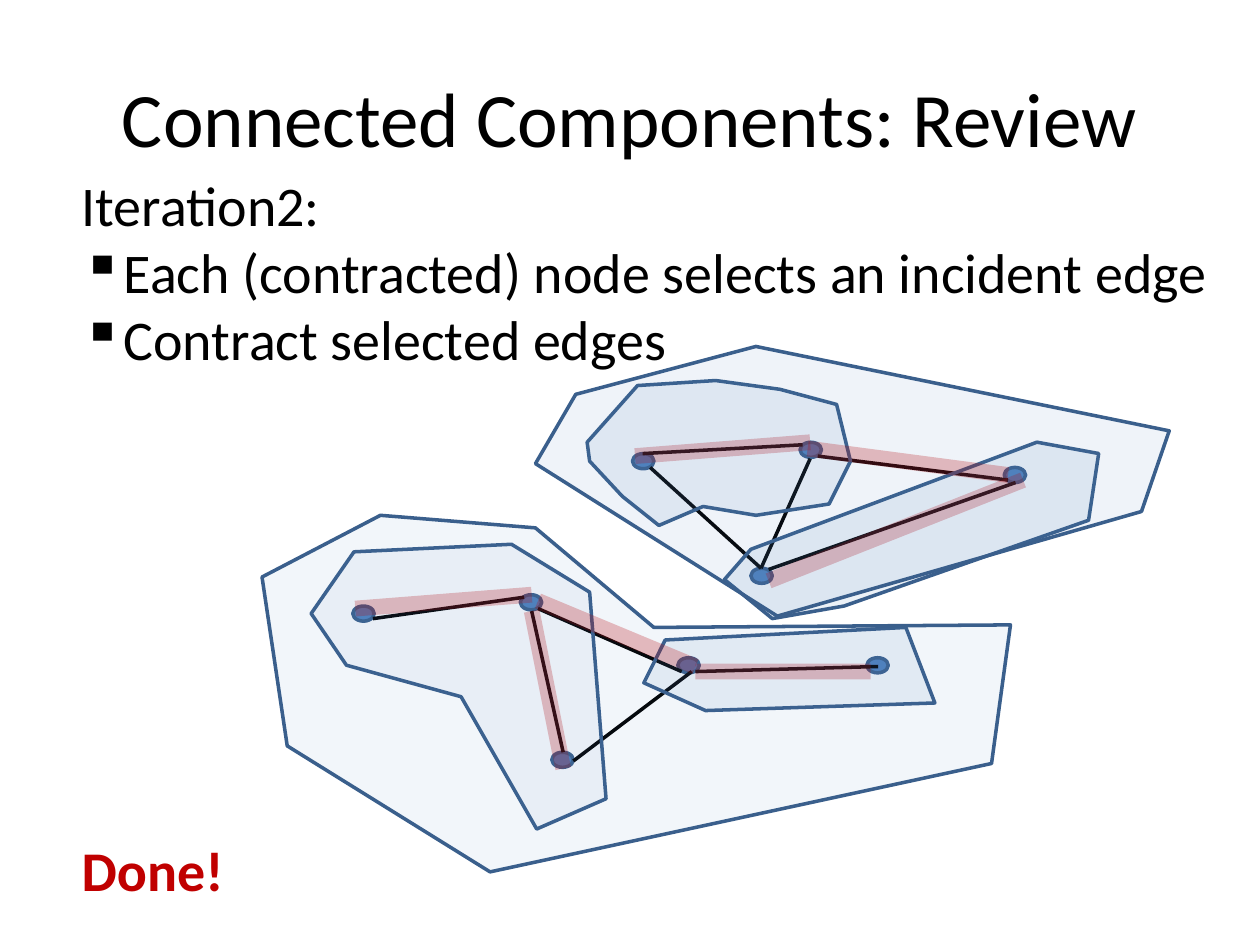
import pptx
import pptx.util
import pptx.dml.color
import pptx.enum.shapes
import pptx.enum.text
import pptx.oxml
import pptx.oxml.ns
import lxml.etree

Inches = pptx.util.Inches
Pt = pptx.util.Pt
RGBColor = pptx.dml.color.RGBColor
qn = pptx.oxml.ns.qn
BLUE = RGBColor(0x4F, 0x81, 0xBD)
NAVY = RGBColor(0x3A, 0x5F, 0x8C)
RED = RGBColor(0xC0, 0x00, 0x00)
BLACK = RGBColor(0x00, 0x00, 0x00)

deck = pptx.Presentation()
deck.slide_width = Inches(10)
deck.slide_height = Inches(7.5)
slide = deck.slides.add_slide(deck.slide_layouts[6])
shapes = slide.shapes


def fade(fill, alpha):
    tint = lxml.etree.SubElement(fill.find(qn("a:srgbClr")), qn("a:alpha"))
    tint.set("val", str(alpha * 1000))


def join(ends, color, width):
    line = shapes.add_connector(
        pptx.enum.shapes.MSO_CONNECTOR.STRAIGHT, *[Inches(n) for n in ends])
    line.line.color.rgb = color
    line.line.width = Pt(width)
    lxml.etree.SubElement(line._element.spPr, qn("a:effectLst"))
    return line


nodes = [
    (4.13, 4.72), (2.8, 4.81), (6.88, 5.22), (5.38, 5.22), (4.38, 5.97),
    (6.35, 3.51), (5.02, 3.6), (7.97, 3.71), (5.96, 4.51),
]
for x, y in nodes:
    node = shapes.add_shape(pptx.enum.shapes.MSO_SHAPE.OVAL, Inches(x), Inches(y),
                            Inches(0.17), Inches(0.12))
    node.shadow.inherit = False
    node.fill.solid()
    node.fill.fore_color.rgb = BLUE
    node.line.color.rgb = NAVY
    node.line.width = Pt(2)

edges = [
    (4.27, 4.83, 5.41, 5.33), (4.22, 4.85, 4.47, 5.97), (2.96, 4.91, 4.16, 4.74),
    (5.49, 5.33, 4.55, 6.04), (6.97, 5.29, 5.52, 5.33), (6.49, 3.62, 8, 3.81),
    (6.43, 3.64, 6.04, 4.51), (5.1, 3.6, 6.37, 3.53), (8.06, 3.83, 6.1, 4.52),
    (5.16, 3.71, 6.04, 4.51),
]
for ends in edges:
    join(ends, BLACK, 2)

first = [
    (5.52, 5.33, 6.91, 5.33), (5.04, 3.62, 6.43, 3.51), (2.82, 4.83, 4.22, 4.72),
    (4.47, 6.1, 4.22, 4.85), (6.1, 4.61, 8.12, 3.81),
]
second = [(6.41, 3.56, 8, 3.77), (4.27, 4.77, 5.52, 5.29)]
small = [
    (10, [(4.66, 3.51), (5.06, 3.06), (5.68, 3.02), (6.19, 3.09), (6.64, 3.21),
          (6.75, 3.66), (6.58, 4), (6, 4.09), (5.58, 4.02), (5.23, 4.17),
          (4.94, 3.94), (4.68, 3.66)]),
    (11, [(5.75, 4.6), (5.96, 4.36), (8.23, 3.51), (8.72, 3.6), (8.64, 4.13),
          (6.7, 4.81), (6.13, 4.91)]),
    (6, [(2.47, 4.87), (2.81, 4.38), (4.06, 4.32), (4.68, 4.7), (4.81, 6.34),
         (4.26, 6.58), (3.66, 5.53), (2.75, 5.28)]),
    (10, [(5.28, 5.08), (5.11, 5.42), (5.6, 5.64), (7.42, 5.58), (7.19, 4.98)]),
]
large = [
    (7, [(2.08, 4.58), (3.02, 4.09), (4.25, 4.19), (5.19, 4.98), (8.02, 4.96),
         (7.87, 6.06), (3.89, 6.92), (2.28, 5.92)]),
    (9, [(6.17, 4.89), (4.25, 3.68), (4.57, 3.13), (6, 2.75), (9.28, 3.42),
         (9.06, 4.06)]),
]
for marks, groups in [(first, small), (second, large)]:
    for ends in marks:
        mark = join(ends, RED, 9)
        fade(mark._element.spPr.find(qn("a:ln")).find(qn("a:solidFill")), 25)
    for alpha, points in groups:
        spots = [(Inches(x), Inches(y)) for x, y in points]
        pen = shapes.build_freeform(*spots[0])
        pen.add_line_segments(spots[1:], close=True)
        group = pen.convert_to_shape()
        group.shadow.inherit = False
        group.fill.solid()
        group.fill.fore_color.rgb = BLUE
        fade(group._element.spPr.find(qn("a:solidFill")), alpha)
        group.line.color.rgb = NAVY
        group.line.width = Pt(2)

texts = [
    ((0.5, 0.3, 9, 1.25), 44, BLACK, True, ["Connected Components: Review"]),
    ((0.55, 1.3, 9.21, 1.72), 32, BLACK, False,
     ["Iteration2:", "Each (contracted) node selects an incident edge",
      "Contract selected edges"]),
    ((0.55, 6.58, 1.34, 0.64), 32, RED, False, ["Done!"]),
]
for place, size, color, title, rows in texts:
    frame = shapes.add_textbox(*[Inches(n) for n in place]).text_frame
    frame.word_wrap = title
    if title:
        frame.vertical_anchor = pptx.enum.text.MSO_ANCHOR.MIDDLE
    else:
        frame.auto_size = pptx.enum.text.MSO_AUTO_SIZE.SHAPE_TO_FIT_TEXT
    for i, row in enumerate(rows):
        para = frame.add_paragraph() if i else frame.paragraphs[0]
        if title:
            para.alignment = pptx.enum.text.PP_ALIGN.CENTER
        if i:
            props = para._p.get_or_add_pPr()
            props.set("marL", str(Inches(0.31)))
            props.set("indent", str(Inches(-0.31)))
            lxml.etree.SubElement(props, qn("a:buChar")).set("char", "▪")
        run = para.add_run()
        run.text = row
        run.font.name = "Calibri"
        run.font.size = Pt(size)
        run.font.color.rgb = color
        run.font.bold = color == RED

deck.save("out.pptx")
